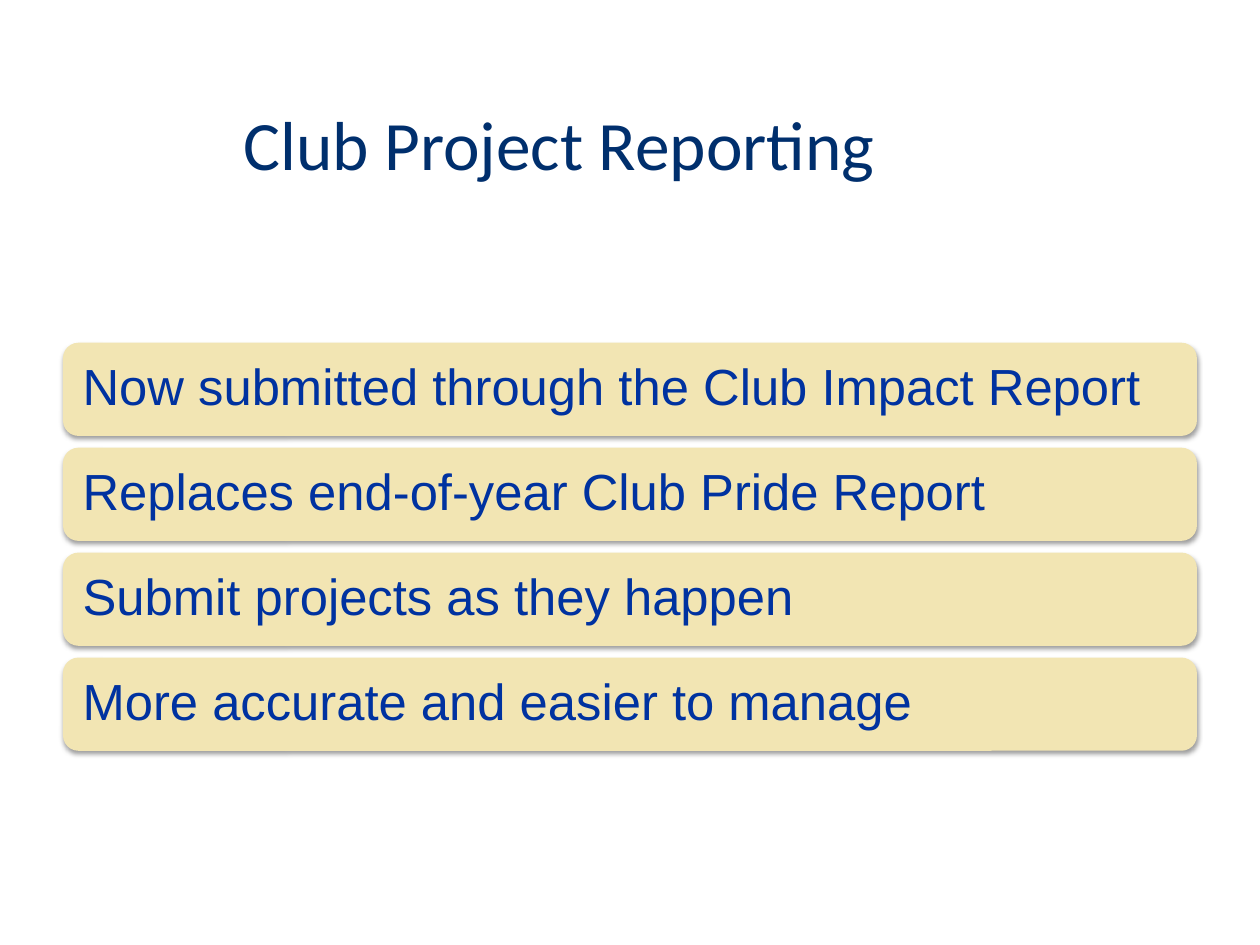
import pptx
import pptx.util
import pptx.dml.color
import pptx.enum.shapes
import pptx.enum.text
import pptx.oxml

Inches = pptx.util.Inches
Pt = pptx.util.Pt
ALIGN = pptx.enum.text.PP_ALIGN
WIDTH, HEIGHT = 10, 7.5
MARGIN = WIDTH * 0.05
FIRST_ROW, ROW_STEP, BAR_HEIGHT = 2.72, 0.833, 0.74
MESSAGES = [
    "Now submitted through the Club Impact Report",
    "Replaces end-of-year Club Pride Report",
    "Submit projects as they happen",
    "More accurate and easier to manage",
]
TITLE_FONT = {"name": "Calibri", "size": Pt(39.6)}
BAR_FONT = {"name": "Arial", "size": Pt(29)}
SHADOW = (
    '<a:effectLst xmlns:a="http://schemas.openxmlformats.org/drawingml/2006/main">'
    '<a:outerShdw blurRad="38100" dist="20320" dir="5400000" rotWithShape="0">'
    '<a:srgbClr val="000000"><a:alpha val="38000"/></a:srgbClr>'
    "</a:outerShdw></a:effectLst>"
)


def color(value):
    return pptx.dml.color.RGBColor.from_string(value)


def write_text(box, text, font, ink, inset, alignment, spacing=1.0):
    frame = box.text_frame
    frame.word_wrap = True
    frame.vertical_anchor = pptx.enum.text.MSO_ANCHOR.MIDDLE
    for side in ("left", "top", "right", "bottom"):
        setattr(frame, f"margin_{side}", Inches(inset))
    para = frame.paragraphs[0]
    para.alignment = alignment
    para.line_spacing = spacing
    span = para.add_run()
    span.text = text
    for name, value in font.items():
        setattr(span.font, name, value)
    span.font.color.rgb = color(ink)


def add_title(page, text):
    box = page.shapes.add_textbox(0, Inches(0.58), Inches(WIDTH * 0.9), Inches(1.11))
    write_text(box, text, TITLE_FONT, "002F6D", 0.05, ALIGN.CENTER)


def add_bar(page, row, text):
    bar = page.shapes.add_shape(
        pptx.enum.shapes.MSO_SHAPE.ROUNDED_RECTANGLE,
        Inches(MARGIN), Inches(FIRST_ROW + row * ROW_STEP),
        Inches(WIDTH - 2 * MARGIN), Inches(BAR_HEIGHT),
    )
    bar.fill.solid()
    bar.fill.fore_color.rgb = color("F2E5B3")
    bar.line.fill.background()
    bar._element.spPr.append(pptx.oxml.parse_xml(SHADOW))
    write_text(bar, text, BAR_FONT, "0032A0", 0.12, ALIGN.LEFT, 0.9)


def main():
    deck = pptx.Presentation()
    deck.slide_width, deck.slide_height = Inches(WIDTH), Inches(HEIGHT)
    page = deck.slides.add_slide(deck.slide_layouts[6])
    add_title(page, "Club Project Reporting ")
    for row, text in enumerate(MESSAGES):
        add_bar(page, row, text)
    deck.save("out.pptx")


if __name__ == "__main__":
    main()
